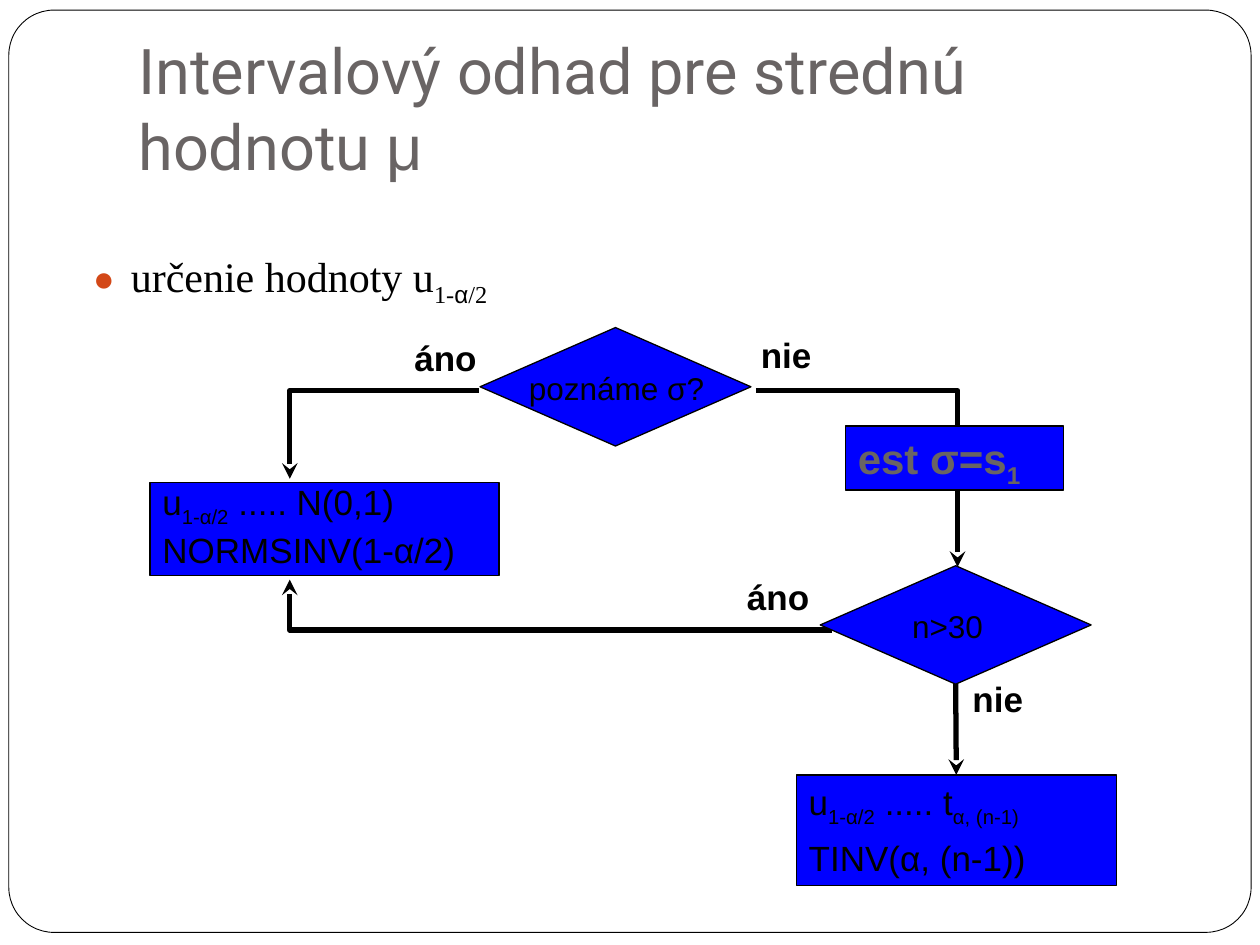
from itertools import groupby

from lxml import etree
from pptx import Presentation
from pptx.dml.color import RGBColor
from pptx.enum.shapes import MSO_CONNECTOR as CONN, MSO_SHAPE as SHAPE
from pptx.enum.text import MSO_ANCHOR as ANCHOR
from pptx.oxml.ns import qn
from pptx.util import Inches, Pt

# Grid: 100 columns by 75 rows
prs = Presentation()
prs.slide_width, prs.slide_height = Inches(10), Inches(7.5)
CELL = prs.slide_width // 100
s = prs.slides.add_slide(prs.slide_layouts[6])
rgb = RGBColor.from_string
BLACK, GREY, BLUE, WHITE, ORANGE = "000000", "696464", "0000FF", "FFFFFF", "D34817"


def cells(*values):
    return [round(v * CELL) for v in values]


def write(sp, lines, size, color=BLACK, font="Arial", spacing=1.0, **font_format):
    """Fill a shape with lines; text between bars is subscript."""
    tf = sp.text_frame
    tf.word_wrap, tf.vertical_anchor = True, ANCHOR.TOP
    for i, line in enumerate(lines):
        p = tf.paragraphs[0] if i == 0 else tf.add_paragraph()
        p.line_spacing = spacing
        p.space_before = Pt(size / 2 if i else 0)
        p.alignment = 1
        for j, piece in enumerate(line.split("|")):
            # Greek letters are always set in Arial
            for greek, chars in groupby(piece, lambda c: font != "Arial" and c in "αμ"):
                r = p.add_run()
                r.text = "".join(chars)
                r.font.color.rgb = rgb(color)
                look = {"size": Pt(size), "name": "Arial" if greek else font, **font_format}
                for name, value in look.items():
                    setattr(r.font, name, value)
                if j % 2:
                    r._r.get_or_add_rPr().set("baseline", "-25000")
    return tf.paragraphs[0]


# Slide frame
frame = s.shapes.add_shape(SHAPE.ROUNDED_RECTANGLE, *cells(0.7, 0.8, 98.6, 73.2))
frame.adjustments[0] = 0.049
frame.shadow.inherit = False
frame.fill.solid()
frame.fill.fore_color.rgb = rgb(WHITE)
frame.line.color.rgb = rgb(BLACK)
frame.line.width = Pt(0.5)

# Title
title = s.shapes.add_textbox(*cells(10, 3, 85, 12.5))
write(title, ["Intervalový odhad pre strednú hodnotu μ"], 36, GREY, "Roboto")
title.text_frame.vertical_anchor = ANCHOR.BOTTOM
title.text_frame.margin_bottom = CELL

# Bulleted line
body = s.shapes.add_textbox(*cells(6.4, 19.4, 85, 6.9))
p = write(body, ["určenie hodnoty u|1-α/2"], 24, font="Times New Roman")
p.space_before = Pt(5.8)
pPr = p._p.get_or_add_pPr()
pPr.set("marL", str(3 * CELL))
pPr.set("indent", str(-3 * CELL))
bullet_color = etree.SubElement(pPr, qn("a:buClr"))
etree.SubElement(bullet_color, qn("a:srgbClr"), val=ORANGE)
etree.SubElement(pPr, qn("a:buSzPct"), val="85000")
etree.SubElement(pPr, qn("a:buFont"), typeface="Arial")
etree.SubElement(pPr, qn("a:buChar"), char="●")

# Bent arrows: start, corner, end
arrows = []
for start, *rest in [
    [(38.5, 30.7), (23.1, 30.7), (23.1, 38.1)],
    [(59.9, 30.6), (75.8, 30.6), (75.8, 44.7)],
    [(65.7, 49.7), (23.2, 49.7), (23.2, 46)],
]:
    path_builder = s.shapes.build_freeform(*start, scale=CELL)
    path_builder.add_line_segments(rest, close=False)
    sp = path_builder.convert_to_shape()
    sp.fill.background()
    sp.shadow.inherit = False
    arrows.append(sp)

# Decisions (diamond with its caption) and result boxes
nodes = []
for left, top, caption, caption_left in [
    (38.1, 26, "poznáme σ?", 41),
    (65.1, 44.9, "n>30", 71.4),
]:
    group = s.shapes.add_group_shape()
    nodes.append(group.shapes.add_shape(SHAPE.DIAMOND, *cells(left, top, 21.5, 9.4)))
    write(group.shapes.add_textbox(*cells(caption_left, top + 2.8, 18, 4)), [caption], 18)

for box, lines, look in [
    ((11.9, 38.3, 27.7, 7.4), ["u|1-α/2| ..... N(0,1)", "NORMSINV(1-α/2)"],
     {"size": 20, "spacing": 0.7}),
    ((67.1, 33.8, 17.3, 5.1), ["est σ=s|1"], {"size": 24, "color": GREY, "bold": True}),
    ((63.2, 61.5, 25.4, 8.8), ["u|1-α/2| ..... t|α, (n-1)", "TINV(α, (n-1))"],
     {"size": 20, "spacing": 0.9}),
]:
    sp = s.shapes.add_shape(SHAPE.RECTANGLE, *cells(*box))
    write(sp, lines, **look)
    nodes.append(sp)

for sp in nodes:
    sp.shadow.inherit = False
    sp.fill.solid()
    sp.fill.fore_color.rgb = rgb(BLUE)
    sp.line.color.rgb = rgb(BLACK)
    sp.line.width = Pt(0.75)

# Straight arrow from the second decision to the last box
link = s.shapes.add_connector(CONN.STRAIGHT, *cells(75.8, 54.3, 75.9, 61.5))
link.begin_connect(nodes[1], 2)
link.end_connect(nodes[-1], 0)
etree.SubElement(link._element.spPr, qn("a:effectLst"))
arrows.append(link)

for arrow in arrows:
    arrow.line.color.rgb = rgb(BLACK)
    arrow.line.width = Pt(3)
    etree.SubElement(arrow.line._get_or_add_ln(), qn("a:tailEnd"), type="stealth")

# Branch labels
for left, top, label in [
    (31.9, 26.2, "áno"), (58.3, 45.2, "áno"), (59.4, 26, "nie"), (76.2, 53.3, "nie"),
]:
    write(s.shapes.add_textbox(*cells(left, top, 9.4, 4.3)), [label], 20, bold=True)

prs.save("out.pptx")
